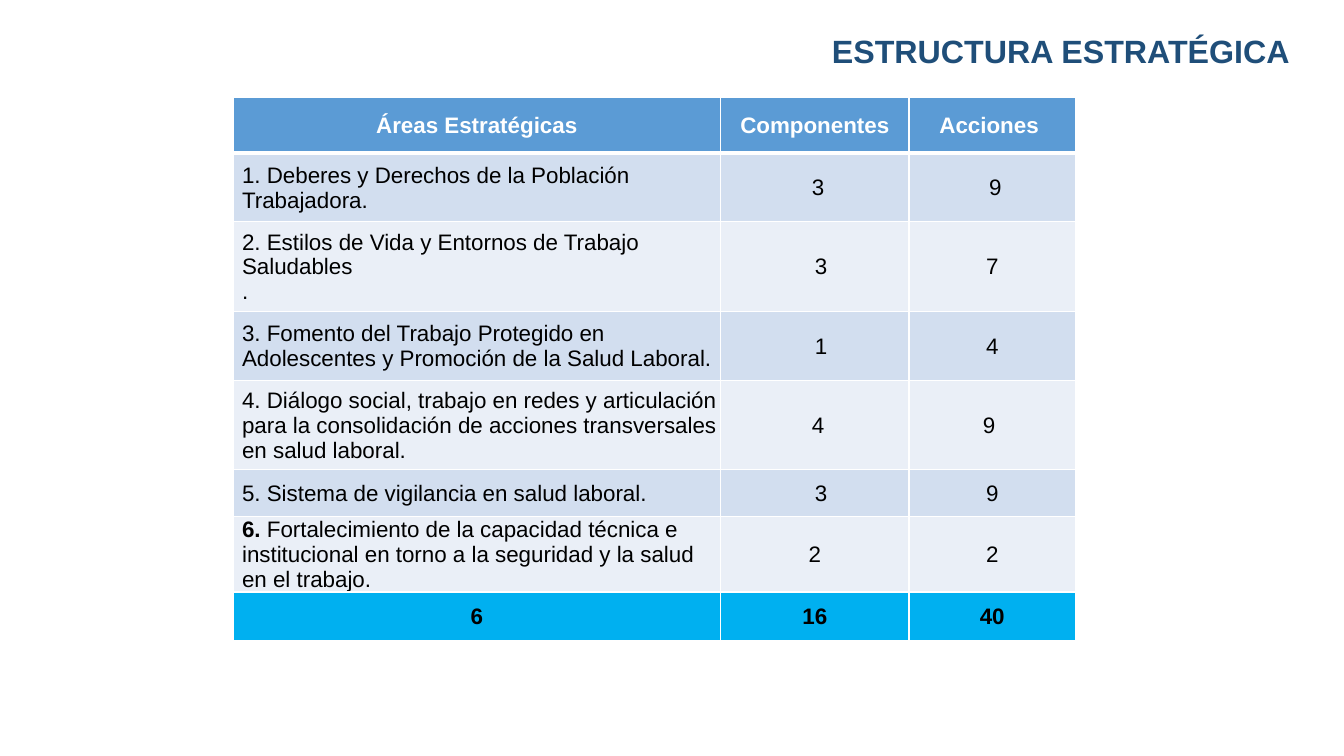
from lxml.etree import SubElement
from pptx import Presentation
from pptx.dml.color import RGBColor
from pptx.enum.text import MSO_ANCHOR, MSO_AUTO_SIZE, PP_ALIGN
from pptx.oxml.ns import qn
from pptx.util import Cm, Pt

COLORS = {
    "title": "1F4E79",
    "header": "5B9BD5",
    "odd": "D2DEEF",
    "even": "EAEFF7",
    "total": "00B0F0",
    "white": "FFFFFF",
    "black": "000000",
}
COL_WIDTHS = [12.29, 4.75, 4.19]
ROW_HEIGHTS = [1.4, 1.73, 2.26, 1.73, 2.26, 1.17, 1.17, 1.22]
SPACE = 0.16
HEADER = ["Áreas Estratégicas", "Componentes", "Acciones "]
AREAS = [
    (["1. Deberes y Derechos de la Población Trabajadora."], "3", "9"),
    (["2. Estilos de Vida y Entornos de Trabajo Saludables", "."], "3", "7"),
    (["3. Fomento del Trabajo Protegido en Adolescentes y Promoción "
      "de la Salud Laboral."], "1", "4"),
    (["4. Diálogo social, trabajo en redes y articulación para la "
      "consolidación de acciones transversales en salud laboral."], "4", "9"),
    (["5. Sistema de vigilancia en salud laboral."], "3", "9"),
    ([[("6.", True), (" Fortalecimiento de la capacidad técnica e institucional "
                      "en torno a la seguridad y la salud en el trabajo.", False)]],
     "2", "2"),
]
SHIFTS = [(1, 1), (2, 0), (2, 0), (1, -1), (2, 0), (0, 0)]
TOTALS = ["6", "16", "40"]


def add_text(tf, paragraphs, size=16, color="black", bold=False, align=PP_ALIGN.CENTER):
    for i, runs in enumerate(paragraphs):
        p = tf.add_paragraph() if i else tf.paragraphs[0]
        p.alignment = align
        for text, run_bold in [(runs, bold)] if isinstance(runs, str) else runs:
            r = p.add_run()
            r.text = text
            r.font.name = "Arial"
            r.font.size = Pt(size)
            r.font.bold = run_bold
            r.font.color.rgb = RGBColor.from_string(COLORS[color])


def set_borders(cell, bottom=1, top=1):
    tc_pr = cell._tc.get_or_add_tcPr()
    widths = {"a:lnL": 1, "a:lnR": 1, "a:lnT": top, "a:lnB": bottom}
    for i, (tag, width) in enumerate(widths.items()):
        ln = SubElement(tc_pr, qn(tag), w=str(Pt(width)))
        fill = SubElement(ln, qn("a:solidFill"))
        SubElement(fill, qn("a:srgbClr"), val=COLORS["white"])
        tc_pr.insert(i, ln)


def fill_cell(cell, paragraphs, fill, left=0.03, right=0.03, bottom=1, top=1, **fmt):
    cell.fill.solid()
    cell.fill.fore_color.rgb = RGBColor.from_string(COLORS[fill])
    cell.vertical_anchor = MSO_ANCHOR.MIDDLE
    cell.margin_left, cell.margin_right = Cm(left), Cm(right)
    cell.margin_top, cell.margin_bottom = Cm(0.03), Cm(0)
    set_borders(cell, bottom, top)
    add_text(cell.text_frame, paragraphs, **fmt)


def add_areas_table(s):
    table = s.shapes.add_table(len(ROW_HEIGHTS), len(COL_WIDTHS), Cm(5.87), Cm(2.46),
                               Cm(sum(COL_WIDTHS)), Cm(sum(ROW_HEIGHTS))).table
    for col, width in zip(table.columns, COL_WIDTHS):
        col.width = Cm(width)
    for row, height in zip(table.rows, ROW_HEIGHTS):
        row.height = Cm(height)
    last = len(ROW_HEIGHTS) - 1
    for c, (heading, total) in enumerate(zip(HEADER, TOTALS)):
        fill_cell(table.cell(0, c), [heading], "header", bottom=3, color="white", bold=True)
        fill_cell(table.cell(last, c), [total], "total", bold=True)
    for r, ((area, *values), shifts) in enumerate(zip(AREAS, SHIFTS), 1):
        fill = "odd" if r % 2 else "even"
        top = 3 if r == 1 else 1
        fill_cell(table.cell(r, 0), area, fill, left=0.23, top=top, align=PP_ALIGN.LEFT)
        for c, (value, shift) in enumerate(zip(values, shifts), 1):
            fill_cell(table.cell(r, c), [value], fill, top=top,
                      left=0.03 + SPACE * max(shift, 0),
                      right=0.03 + SPACE * max(-shift, 0))


def add_title(s):
    tf = s.shapes.add_textbox(Cm(13.21), Cm(0.66), Cm(19.76), Cm(1.24)).text_frame
    tf.word_wrap = True
    tf.auto_size = MSO_AUTO_SIZE.SHAPE_TO_FIT_TEXT
    add_text(tf, ["ESTRUCTURA ESTRATÉGICA "], size=23, color="title", bold=True,
             align=PP_ALIGN.RIGHT)


def main():
    prs = Presentation()
    prs.slide_width, prs.slide_height = Cm(33.87), Cm(19.05)
    s = prs.slides.add_slide(prs.slide_layouts[6])
    add_areas_table(s)
    add_title(s)
    prs.save("out.pptx")


if __name__ == "__main__":
    main()
